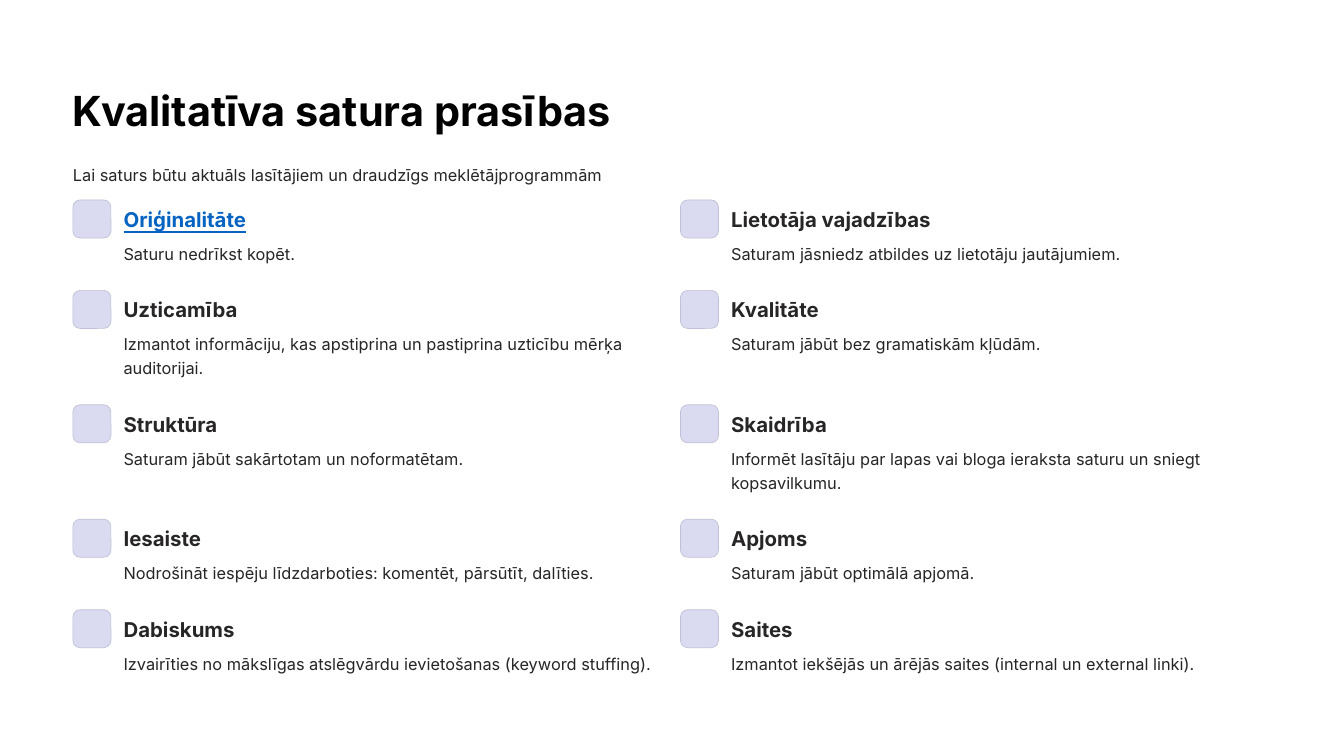
from dataclasses import dataclass

from pptx import Presentation
from pptx.dml.color import RGBColor
from pptx.enum.shapes import MSO_SHAPE
from pptx.util import Pt

ROUNDED = MSO_SHAPE.ROUNDED_RECTANGLE

WHITE = RGBColor(0xFF, 0xFF, 0xFF)
BLACK = RGBColor(0x00, 0x00, 0x00)
INK = RGBColor(0x27, 0x25, 0x25)
LINK_BLUE = RGBColor(0x05, 0x63, 0xC1)
BADGE_FILL = RGBColor(0xDA, 0xDB, 0xF1)
BADGE_EDGE = RGBColor(0xC0, 0xC1, 0xD7)

FONT = "Inter"
MARGIN = 62.5
CONTENT_WIDTH = 1027
COLUMN_STEP = 520.75
COLUMN_WIDTH = CONTENT_WIDTH - COLUMN_STEP
GRID_TOP = 171.4
ROW_GAP = 57.05
BODY_LINE = 20.5
BADGE = 32.6
TEXT_INDENT = 43.4


@dataclass
class Requirement:
    heading: str
    body: str
    lines: int = 1
    linked: bool = False


ROWS = [
    (Requirement("Oriģinalitāte", "Saturu nedrīkst kopēt.", linked=True),
     Requirement("Lietotāja vajadzības",
                 "Saturam jāsniedz atbildes uz lietotāju jautājumiem.")),
    (Requirement("Uzticamība",
                 "Izmantot informāciju, kas apstiprina un pastiprina "
                 "uzticību mērķa auditorijai.", lines=2),
     Requirement("Kvalitāte", "Saturam jābūt bez gramatiskām kļūdām.")),
    (Requirement("Struktūra", "Saturam jābūt sakārtotam un noformatētam."),
     Requirement("Skaidrība",
                 "Informēt lasītāju par lapas vai bloga ieraksta saturu "
                 "un sniegt kopsavilkumu.", lines=2)),
    (Requirement("Iesaiste",
                 "Nodrošināt iespēju līdzdarboties: komentēt, pārsūtīt, dalīties."),
     Requirement("Apjoms", "Saturam jābūt optimālā apjomā.")),
    (Requirement("Dabiskums",
                 "Izvairīties no mākslīgas atslēgvārdu ievietošanas (keyword stuffing)."),
     Requirement("Saites",
                 "Izmantot iekšējās un ārējās saites (internal un external linki).")),
]


def add_text(slide, box, text, size, spacing, color=INK, bold=False,
             underline=False, wrap=False):
    left, top, width, height = map(Pt, box)
    frame = slide.shapes.add_textbox(left, top, width, height).text_frame
    frame.margin_left = frame.margin_right = 0
    frame.margin_top = frame.margin_bottom = 0
    frame.word_wrap = wrap
    frame.text = text
    paragraph = frame.paragraphs[0]
    paragraph.line_spacing = Pt(spacing)
    font = paragraph.runs[0].font
    font.name = FONT
    font.size = Pt(size)
    font.color.rgb = color
    font.bold = bold
    font.underline = underline


def add_header(slide, left, top, width):
    add_text(slide, (left, top, 464.4, 44.5), "Kvalitatīva satura prasības",
             35.5, 44.5, BLACK, bold=True)
    add_text(slide, (left, top + 67.7, width, BODY_LINE),
             "Lai saturs būtu aktuāls lasītājiem un draudzīgs meklētājprogrammām",
             14, BODY_LINE)


def add_badge(slide, left, top):
    badge = slide.shapes.add_shape(ROUNDED, Pt(left), Pt(top), Pt(BADGE), Pt(BADGE))
    badge.adjustments[0] = 0.187
    badge.shadow.inherit = False
    badge.fill.solid()
    badge.fill.fore_color.rgb = BADGE_FILL
    badge.line.color.rgb = BADGE_EDGE
    badge.line.width = Pt(0.6)


def add_requirement(slide, left, top, width, requirement):
    add_badge(slide, left, top)
    text_left = left + TEXT_INDENT
    add_text(slide, (text_left, top + 5, 178.6, 22), requirement.heading, 17.5, 22,
             LINK_BLUE if requirement.linked else INK,
             bold=True, underline=requirement.linked)
    body_box = (text_left, top + 34.2, width - TEXT_INDENT,
                requirement.lines * BODY_LINE)
    add_text(slide, body_box, requirement.body, 14, BODY_LINE,
             wrap=requirement.lines > 1)


def add_requirement_grid(slide, left, top):
    for row in ROWS:
        for column, requirement in enumerate(row):
            add_requirement(slide, left + column * COLUMN_STEP, top,
                            COLUMN_WIDTH, requirement)
        top += ROW_GAP + BODY_LINE * max(item.lines for item in row)


def main():
    presentation = Presentation()
    presentation.slide_width = Pt(1152)
    presentation.slide_height = Pt(648)
    slide = presentation.slides.add_slide(presentation.slide_layouts[6])
    slide.background.fill.solid()
    slide.background.fill.fore_color.rgb = WHITE
    add_header(slide, MARGIN, 70.6, CONTENT_WIDTH)
    add_requirement_grid(slide, MARGIN, GRID_TOP)
    presentation.save("out.pptx")


if __name__ == "__main__":
    main()
